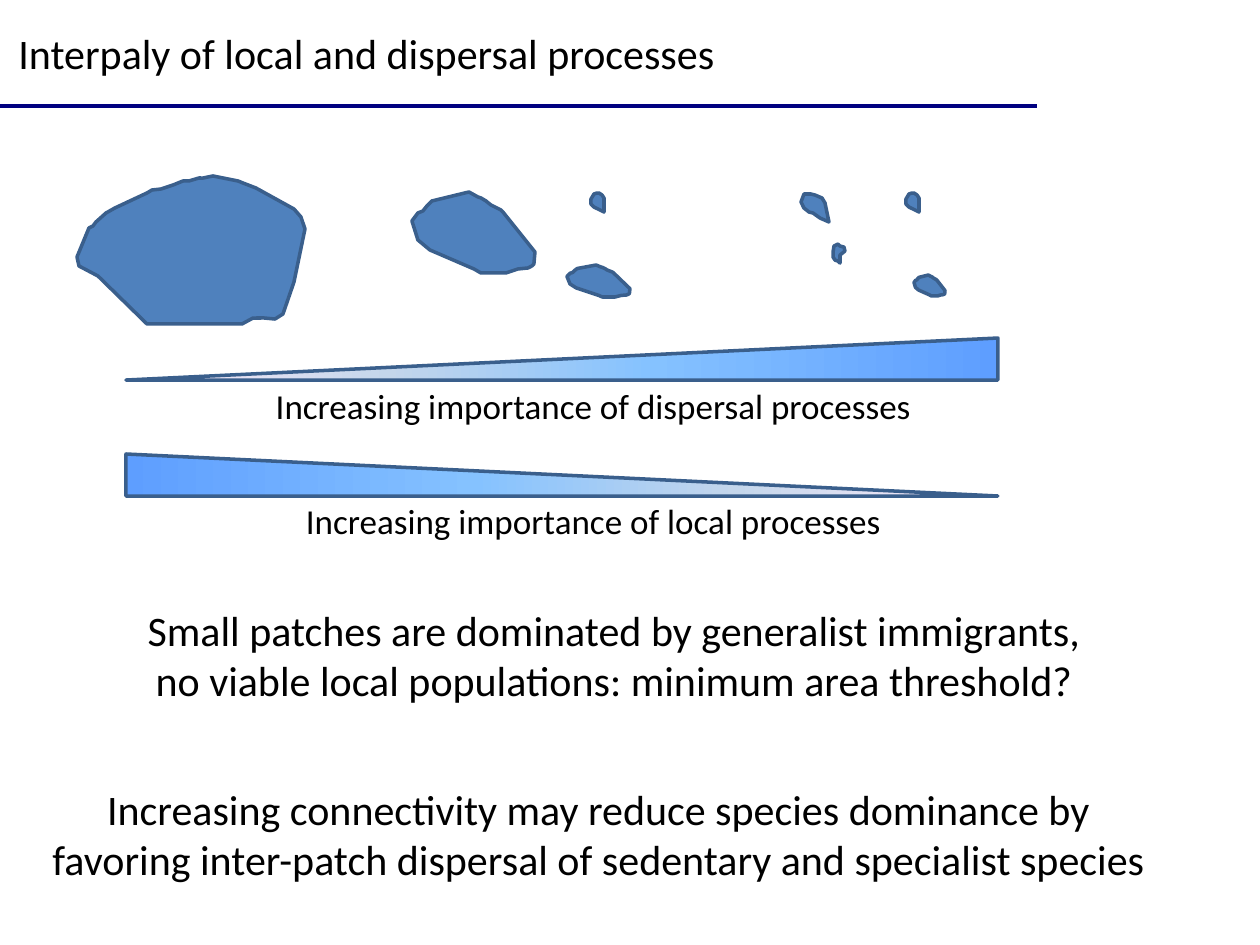
from math import cos, radians, sin

from lxml.etree import SubElement
from pptx import Presentation
from pptx.dml.color import RGBColor
from pptx.enum.shapes import MSO_CONNECTOR, MSO_SHAPE
from pptx.enum.text import MSO_AUTO_SIZE, PP_ALIGN
from pptx.oxml.ns import qn
from pptx.util import Inches, Pt

SCALE = Inches(1) / 126
COLORS = {"text": "000000", "rule": "000080", "patch": "4F81BD", "edge": "3A5F8C"}
FADE = {0: "5E9EFF", 40: "85C2FF", 70: "C4D6EB", 100: "FFEBFA"}

MAINLAND = [
    (98, 276), (147, 324), (242, 324), (253, 318), (264, 318), (275, 319),
    (283, 314), (294, 282), (305, 229), (301, 217), (294, 209), (256, 188),
    (243, 183), (238, 181), (213, 176), (203, 178), (199, 178), (189, 181),
    (183, 181), (173, 185), (161, 189), (152, 190), (147, 193), (115, 208),
    (106, 213), (96, 222), (93, 226), (89, 228), (77, 257), (79, 266),
]
ISLAND = [
    (57, 0), (66, 5), (69, 6), (74, 9), (79, 13), (89, 18), (91, 20), (123, 60),
    (122, 72), (120, 74), (116, 76), (106, 77), (94, 81), (88, 81), (69, 81),
    (62, 77), (18, 58), (6, 48), (0, 29), (6, 21), (11, 19), (15, 14), (20, 9),
]
ISLAND_SIZE = (123, 81)
ISLAND_FRAMES = [(412, 192, 123, 81), (567, 265, 63, 32), (914, 275, 31, 21)]
ISLET = [
    (13, 18), (13, 4), (11, 1), (8, -1), (6, -1), (3, 0),
    (0, 5), (0, 10), (3, 13), (5, 14), (9, 16),
]
ISLET_LEFTS = [591, 906]
ISLET_TOP = 194
WEDGE_ISLET = [
    (829, 222), (825, 203), (822, 198), (815, 195), (811, 194), (804, 194),
    (801, 202), (804, 208), (809, 212), (813, 213), (820, 218),
]
HOOKED_ISLET = [
    (840, 255), (845, 251), (844, 247), (840, 246), (838, 244), (834, 246),
    (833, 252), (833, 257), (835, 260), (838, 261), (840, 263),
]
TEXTS = [
    ("Increasing importance of dispersal processes", (116, 378, 955, 55), 20),
    ("Increasing importance of local processes", (116, 493, 955, 55), 20),
    ("Small patches are dominated by generalist immigrants, "
     "no viable local populations: minimum area threshold?", (126, 598, 976, 115), 24),
    ("Increasing connectivity may reduce species dominance by "
     "favoring inter-patch dispersal of sedentary and specialist species",
     (21, 777, 1155, 115), 24),
]


def emu(length):
    """Turn px into EMU."""
    return round(length * SCALE)


def rotate(point, angle):
    """Turn a point clockwise about the origin."""
    x, y = point
    turn = radians(angle)
    return x * cos(turn) - y * sin(turn), x * sin(turn) + y * cos(turn)


def apply(target, values):
    """Set every named value on the target."""
    for name, value in values.items():
        setattr(target, name, value)


class Painter:
    """Holds the style and the current page."""

    def __init__(self, page, font="Calibri", stroke=2):
        """Keep the page, font and line width."""
        self.page = page
        self.font = font
        self.stroke = stroke

    def outline(self, shape, color):
        """Draw the edge of a shape."""
        shape.line.color.rgb = RGBColor.from_string(COLORS[color])
        shape.line.width = Pt(self.stroke)

    def rule(self, left, top, right):
        """Draw a level line."""
        ends = [emu(length) for length in (left, top, right, top)]
        line = self.page.shapes.add_connector(MSO_CONNECTOR.STRAIGHT, *ends)
        self.outline(line, "rule")
        SubElement(line._element.spPr, qn("a:effectLst"))

    def text(self, words, frame, size, align=PP_ALIGN.CENTER, wrap=True):
        """Write one paragraph in a box."""
        box = self.page.shapes.add_textbox(*map(emu, frame))
        apply(box.text_frame, {"word_wrap": wrap, "auto_size": MSO_AUTO_SIZE.SHAPE_TO_FIT_TEXT})
        para = box.text_frame.paragraphs[0]
        para.alignment = align
        span = para.add_run()
        span.text = words
        apply(span.font, {"name": self.font, "size": Pt(size)})
        span.font.color.rgb = RGBColor.from_string(COLORS["text"])

    def patch(self, points, angle=0):
        """Draw a habitat patch whose frame is turned by an angle."""
        level = [rotate(point, -angle) for point in points]
        xs, ys = zip(*level)
        middle = ((min(xs) + max(xs)) / 2, (min(ys) + max(ys)) / 2)
        center_x, center_y = rotate(middle, angle)
        corners = [(emu(x), emu(y)) for x, y in level]
        builder = self.page.shapes.build_freeform(*corners[0])
        builder.add_line_segments(corners[1:], close=True)
        shape = builder.convert_to_shape()
        apply(shape, {
            "left": emu(center_x) - shape.width // 2,
            "top": emu(center_y) - shape.height // 2,
            "rotation": angle,
        })
        shape.shadow.inherit = False
        shape.fill.solid()
        shape.fill.fore_color.rgb = RGBColor.from_string(COLORS["patch"])
        self.outline(shape, "edge")

    def wedge(self, frame, peak, angle):
        """Draw a fading triangle with its peak at one end."""
        shape = self.page.shapes.add_shape(MSO_SHAPE.ISOSCELES_TRIANGLE, *map(emu, frame))
        shape.adjustments[0] = peak
        shape.shadow.inherit = False
        shape.fill.gradient()
        shape.fill.gradient_angle = angle
        stops = shape._element.spPr.find(qn("a:gradFill")).find(qn("a:gsLst"))
        for stop in list(stops):
            stops.remove(stop)
        for percent, color in FADE.items():
            stop = SubElement(stops, qn("a:gs"), pos=str(percent * 1000))
            SubElement(stop, qn("a:srgbClr"), val=color)
        self.outline(shape, "edge")


def main():
    """Build the page and save the deck."""
    deck = Presentation()
    apply(deck, {"slide_width": emu(1260), "slide_height": emu(945)})
    painter = Painter(deck.slides.add_slide(deck.slide_layouts[6]))

    painter.rule(0, 106, 1037)
    painter.text("Interpaly of local and dispersal processes",
                 (6, 21, 728, 63), 24, PP_ALIGN.LEFT, False)
    painter.patch(MAINLAND, 334.4)
    for left, top, width, height in ISLAND_FRAMES:
        painter.patch([(left + x * width / ISLAND_SIZE[0], top + y * height / ISLAND_SIZE[1])
                       for x, y in ISLAND])
    islets = [[(left + x, ISLET_TOP + y) for x, y in ISLET] for left in ISLET_LEFTS]
    for points in [*islets, WEDGE_ISLET, HOOKED_ISLET]:
        painter.patch(points, 201.4)
    for top, peak, angle in [(338, 1, 180), (454, 0, 0)]:
        painter.wedge((126, top, 872, 42), peak, angle)
    for words, frame, size in TEXTS:
        painter.text(words, frame, size)
    deck.save("out.pptx")


if __name__ == "__main__":
    main()
